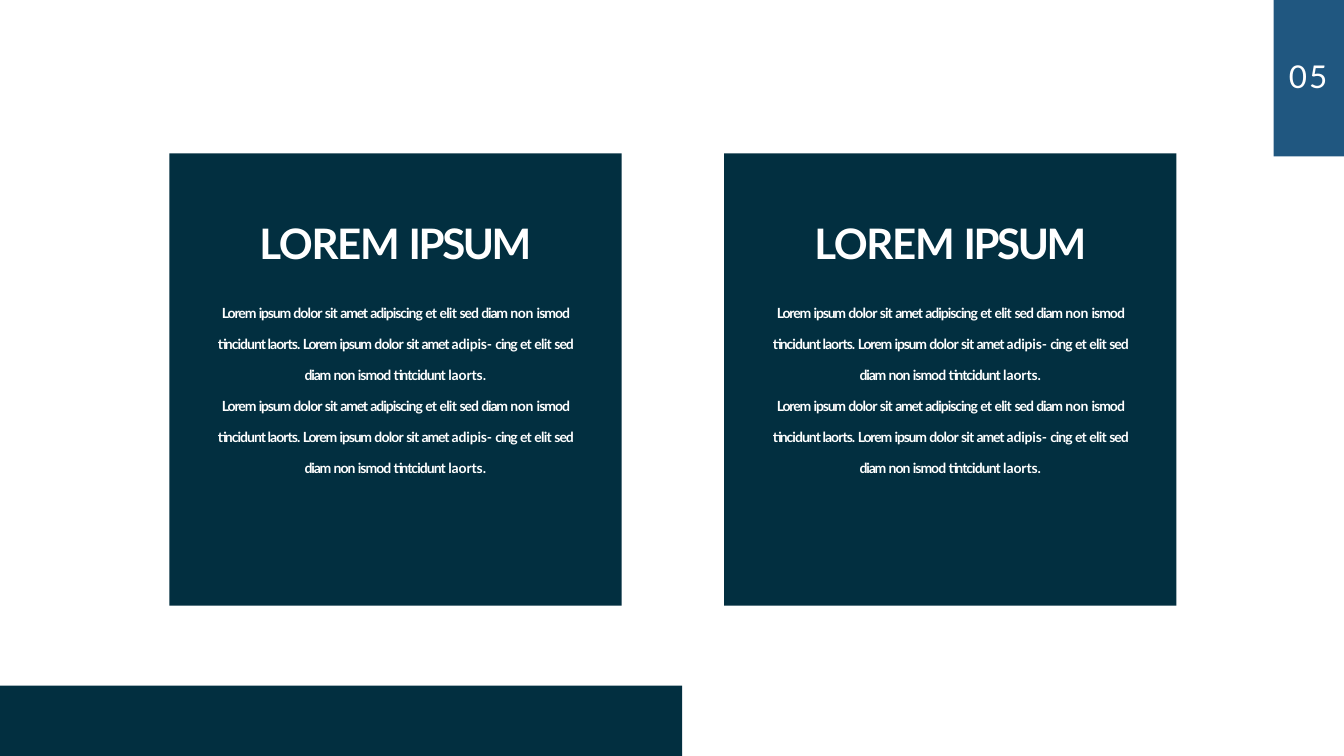
from dataclasses import dataclass

import pptx
import pptx.dml.color
import pptx.enum.shapes
import pptx.enum.text
import pptx.util

Inches = pptx.util.Inches
Pt = pptx.util.Pt
RGB = pptx.dml.color.RGBColor
Align = pptx.enum.text.PP_ALIGN

Runs = list[tuple[str, float]]


@dataclass(frozen=True)
class Theme:
    font: str = "Lato"
    navy: str = "022F40"
    blue: str = "205780"
    white: str = "FFFFFF"
    heading: float = 49.5
    body: float = 16.5
    number: float = 37


@dataclass(frozen=True)
class Panel:
    left: float
    top: float
    width: float
    height: float
    color: str


@dataclass(frozen=True)
class Card:
    panel: Panel
    heading: Runs
    body: list[Runs]


THEME = Theme()
WIDTH, HEIGHT = 21.99, 12.37
CARD_SIZE, CARD_TOP, CARD_LEFT, CARD_STEP = 7.4, 2.51, 2.77, 9.08
BODY_MARGIN = 0.76

HEADING: Runs = [("LOREM ", -1.5), ("IPSUM", -2.8)]
SENTENCES: Runs = [
    ("Lorem ", -1.3), ("ipsum ", -1.4), ("dolor ", -1), ("sit ", -1.1),
    ("amet ", -1.4), ("adipiscing ", -1.2), ("et ", -1), ("elit ", -0.9),
    ("sed ", -1.2), ("diam ", -1.4), ("non ", -0.3), ("ismod ", -1.2),
    ("tincidunt laorts. ", -1.1), ("Lorem ", -1.3), ("ipsum ", -1.4),
    ("dolor ", -0.9), ("sit ", -1.1), ("amet ", -1.4), ("adipis- ", -0.2),
    ("cing ", -1.2), ("et ", -1), ("elit ", -0.9), ("sed ", -1.2),
    ("diam ", -1.4), ("non ", -1.1), ("ismod ", -1.2),
    ("tintcidunt ", -1.1), ("laorts.", -0.1),
]

CARDS = [
    Card(Panel(CARD_LEFT + i * CARD_STEP, CARD_TOP, CARD_SIZE, CARD_SIZE, THEME.navy),
         HEADING, [SENTENCES, SENTENCES])
    for i in range(2)
]
FOOTER_BAR = Panel(0, 11.22, 11.16, 1.15, THEME.navy)
NUMBER_TAB = Panel(20.84, 0, 1.15, 2.56, THEME.blue)


def set_frame(tf: pptx.text.text.TextFrame, top: float) -> None:
    tf.word_wrap = True
    tf.auto_size = pptx.enum.text.MSO_AUTO_SIZE.NONE
    tf.vertical_anchor = pptx.enum.text.MSO_ANCHOR.TOP
    tf.margin_left = tf.margin_right = tf.margin_bottom = 0
    tf.margin_top = Inches(top)


def write(p: pptx.text.text._Paragraph, runs: Runs, *, size: float,
          bold: bool = False, align: Align = Align.CENTER,
          left: float = 0, right: float = 0,
          line: float = 1, before: float = 0) -> None:
    p.alignment = align
    p.line_spacing = line
    if before:
        p.space_before = Pt(before)
    p_pr = p._p.get_or_add_pPr()
    p_pr.set("marL", str(Inches(left)))
    p_pr.set("marR", str(Inches(right)))
    p_pr.set("indent", "0")
    for text, spacing in runs:
        r = p.add_run()
        r.text = text
        r.font.name = THEME.font
        r.font.size = Pt(size)
        r.font.bold = bold
        r.font.color.rgb = RGB.from_string(THEME.white)
        r.font._element.set("spc", str(round(spacing * 100)))


def add_panel(slide: pptx.slide.Slide, panel: Panel) -> pptx.shapes.autoshape.Shape:
    sp = slide.shapes.add_shape(
        pptx.enum.shapes.MSO_SHAPE.RECTANGLE, Inches(panel.left), Inches(panel.top),
        Inches(panel.width), Inches(panel.height))
    sp.shadow.inherit = False
    sp.fill.solid()
    sp.fill.fore_color.rgb = RGB.from_string(panel.color)
    sp.line.fill.background()
    return sp


def add_card(slide: pptx.slide.Slide, card: Card) -> None:
    tf = add_panel(slide, card.panel).text_frame
    set_frame(tf, 1.05)
    write(tf.paragraphs[0], card.heading, size=THEME.heading, bold=True)
    for i, runs in enumerate(card.body):
        write(tf.add_paragraph(), runs, size=THEME.body, bold=True,
              left=BODY_MARGIN, right=BODY_MARGIN, line=1.85,
              before=26 if i == 0 else 0)


def add_number(slide: pptx.slide.Slide, number: str) -> None:
    title = slide.shapes.title
    title.left, title.top = Inches(21.07), Inches(0.91)
    title.width, title.height = Inches(0.69), Inches(0.65)
    set_frame(title.text_frame, 0.02)
    write(title.text_frame.paragraphs[0], [(number, 2.4)], size=THEME.number,
          align=Align.LEFT, left=0.02)
    slide.shapes._spTree.append(title._element)


def main() -> None:
    prs = pptx.Presentation()
    prs.slide_width, prs.slide_height = Inches(WIDTH), Inches(HEIGHT)
    slide = prs.slides.add_slide(prs.slide_layouts.get_by_name("Title Only"))
    for card in CARDS:
        add_card(slide, card)
    for panel in (FOOTER_BAR, NUMBER_TAB):
        add_panel(slide, panel)
    add_number(slide, "05")
    prs.save("out.pptx")


if __name__ == "__main__":
    main()
